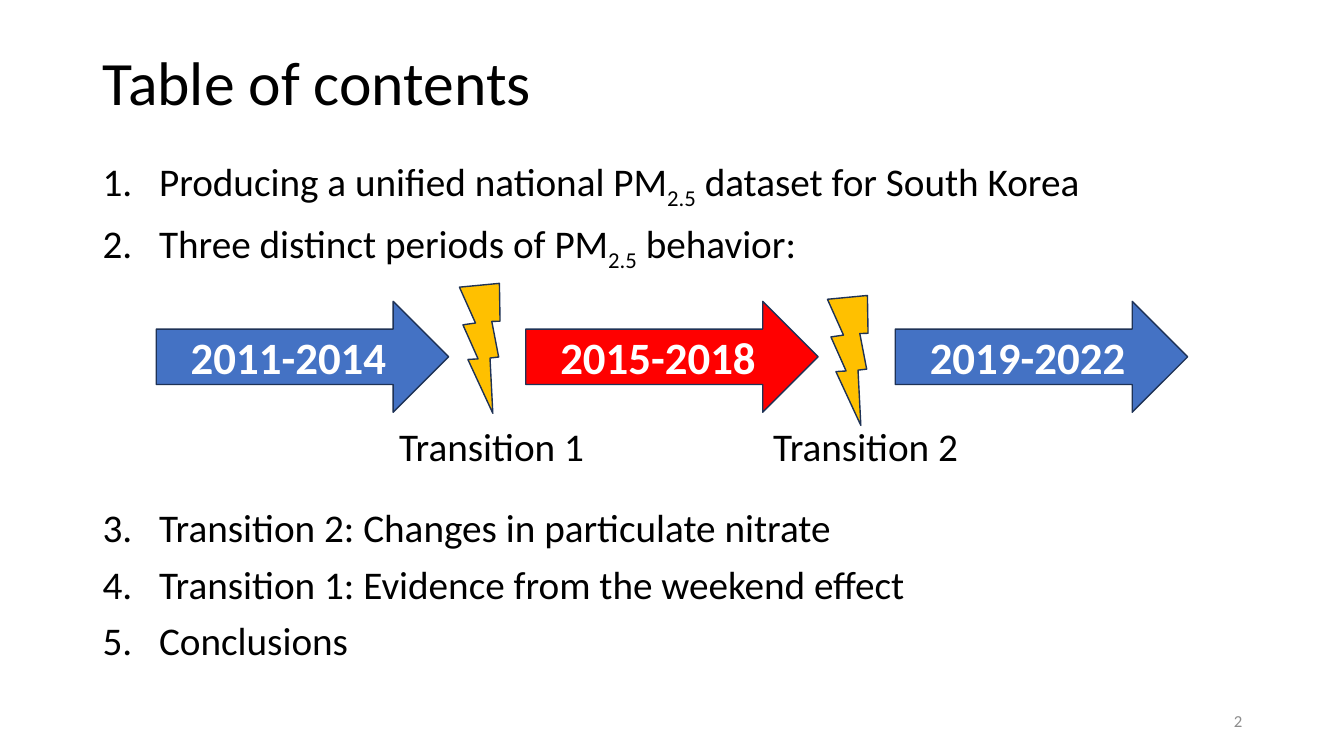
from lxml.etree import SubElement
from pptx import Presentation
from pptx.dml.color import RGBColor
from pptx.enum.shapes import MSO_SHAPE
from pptx.enum.text import MSO_ANCHOR, PP_ALIGN
from pptx.oxml.ns import qn
from pptx.util import Inches, Pt

COLORS = {
    "text": "000000",
    "page_number": "8C8C8C",
    "white": "FFFFFF",
    "blue": "4472C4",
    "red": "FF0000",
    "yellow": "FFC000",
    "outline": "1E3256",
}
NUMBER_INDENT = Inches(0.56)
PERIODS = [("2011-2014", "blue"), ("2015-2018", "red"), ("2019-2022", "blue")]
ARROW_LEFT, ARROW_PITCH = 1.55, 3.665
# Each transition: label, label left, bolt left, bolt top
TRANSITIONS = [("Transition 1", 3.86, 4.34, 2.79), ("Transition 2", 7.57, 7.99, 2.91)]
OPENING_ITEMS = [
    ["Producing a unified national PM", "2.5", " dataset for South Korea"],
    ["Three distinct periods of PM", "2.5", " behavior:"],
]
CLOSING_ITEMS = [
    ["Transition 2: Changes in particulate nitrate"],
    ["Transition 1: Evidence from the weekend effect"],
    ["Conclusions"],
]


def format_font(font, color="text", **values):
    for name, value in {"name": "Calibri", **values}.items():
        setattr(font, name, value)
    font.color.rgb = RGBColor.from_string(COLORS[color])


def set_text(shape, text, size, color="text", bold=False, align=PP_ALIGN.LEFT,
             anchor=MSO_ANCHOR.MIDDLE, wrap=True):
    frame = shape.text_frame
    frame.word_wrap = wrap
    frame.vertical_anchor = anchor
    paragraph = frame.paragraphs[0]
    paragraph.alignment = align
    run = paragraph.add_run()
    run.text = text
    format_font(run.font, color, size=Pt(size), bold=bold)


def add_label(slide, box, text, size, **formats):
    label = slide.shapes.add_textbox(*map(Inches, box))
    set_text(label, text, size, **formats)


def add_title(slide, text):
    title = slide.shapes.title
    position = {"left": 0.92, "top": 0.12, "width": 11.5, "height": 1.45}
    for name, value in position.items():
        setattr(title, name, Inches(value))
    set_text(title, text, 44)
    title.text_frame.paragraphs[0].line_spacing = 0.9


def add_numbered_list(slide, top, height, items, start):
    """Add numbered items; the middle part of a three-part item is a subscript."""
    box = slide.shapes.add_textbox(Inches(0.92), Inches(top), Inches(11.5), Inches(height))
    frame = box.text_frame
    frame.word_wrap = True
    for index, parts in enumerate(items):
        paragraph = frame.add_paragraph() if index else frame.paragraphs[0]
        properties = paragraph._p.get_or_add_pPr()
        properties.set("marL", str(NUMBER_INDENT))
        properties.set("indent", str(-NUMBER_INDENT))
        numbering = SubElement(properties, qn("a:buAutoNum"), type="arabicPeriod")
        if start > 1:
            numbering.set("startAt", str(start))
        paragraph.line_spacing = 0.9
        paragraph.space_before = Pt(10 if index else 0)
        for position, text in enumerate(parts):
            run = paragraph.add_run()
            run.text = text
            format_font(run.font, size=Pt(28))
            if position == 1:
                run._r.get_or_add_rPr().set("baseline", "-25000")


def add_filled_shape(slide, kind, box, color):
    shape = slide.shapes.add_shape(kind, *map(Inches, box))
    shape.shadow.inherit = False
    shape.fill.solid()
    shape.fill.fore_color.rgb = RGBColor.from_string(COLORS[color])
    shape.line.color.rgb = RGBColor.from_string(COLORS["outline"])
    shape.line.width = Pt(1)
    return shape


def add_timeline(slide):
    for index, (period, color) in enumerate(PERIODS):
        box = (ARROW_LEFT + index * ARROW_PITCH, 2.99, 2.9, 1.1)
        arrow = add_filled_shape(slide, MSO_SHAPE.RIGHT_ARROW, box, color)
        set_text(arrow, period, 32, "white", bold=True, align=PP_ALIGN.CENTER)
    for text, label_left, bolt_left, bolt_top in TRANSITIONS:
        box = (bolt_left, bolt_top, 0.86, 1.18)
        bolt = add_filled_shape(slide, MSO_SHAPE.LIGHTNING_BOLT, box, "yellow")
        bolt.rotation = 26.8
        add_label(slide, (label_left, 4.14, 2.06, 0.57), text, 28,
                  anchor=MSO_ANCHOR.TOP, wrap=False)


def main():
    presentation = Presentation()
    presentation.slide_width = Inches(13.33)
    presentation.slide_height = Inches(7.5)
    slide = presentation.slides.add_slide(presentation.slide_layouts[5])
    add_title(slide, "Table of contents")
    add_numbered_list(slide, 1.52, 1.3, OPENING_ITEMS, start=1)
    add_timeline(slide)
    add_numbered_list(slide, 5, 1.75, CLOSING_ITEMS, start=len(OPENING_ITEMS) + 1)
    add_label(slide, (9.42, 6.95, 3, 0.4), "2", 12, color="page_number",
              align=PP_ALIGN.RIGHT)
    presentation.save("out.pptx")


if __name__ == "__main__":
    main()
